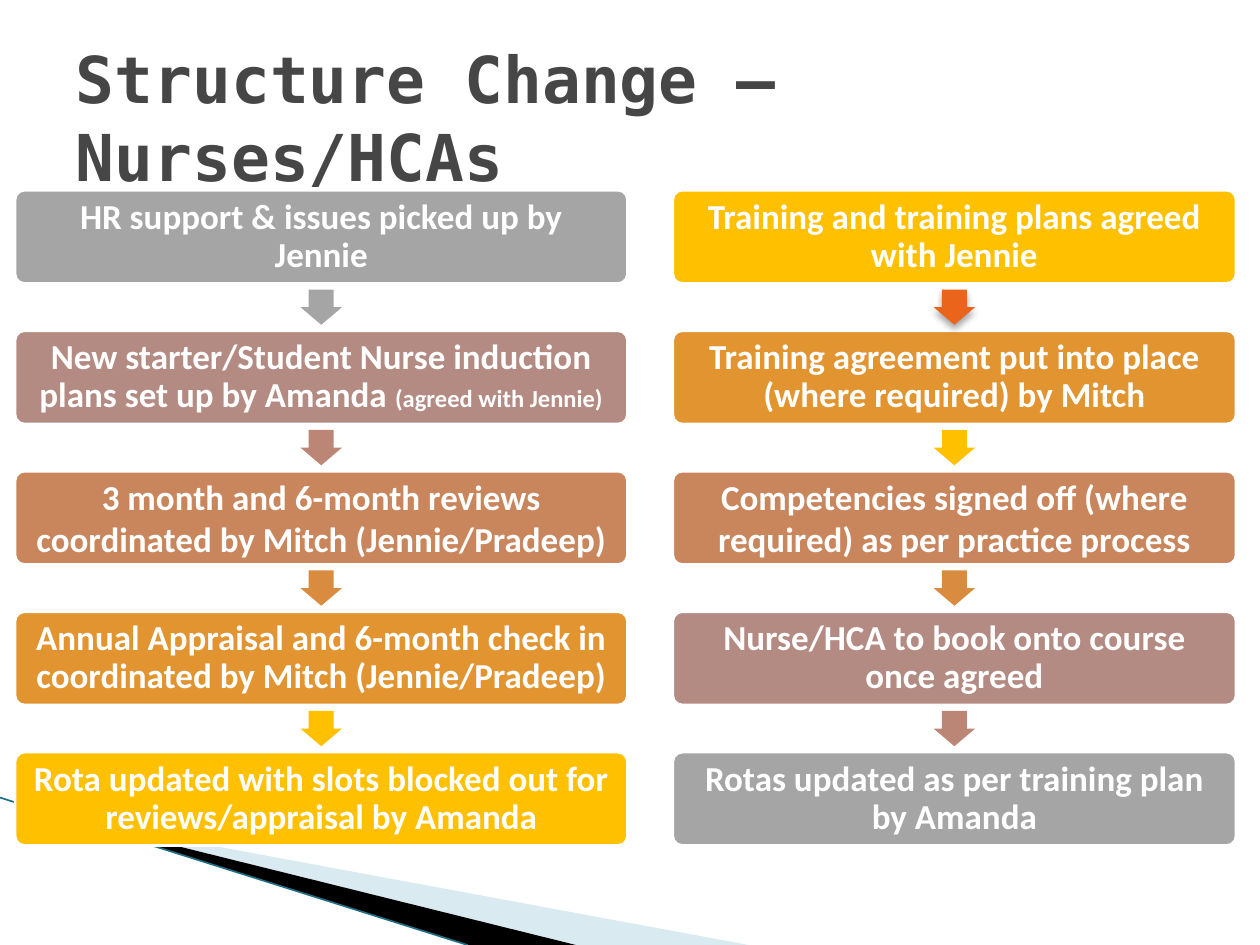
from dataclasses import dataclass

from lxml import etree
from pptx import Presentation
from pptx.dml.color import RGBColor
from pptx.enum import shapes, text
from pptx.oxml import ns
from pptx.util import Inches, Pt


@dataclass(frozen=True)
class Theme:
    """Colours, fonts and type sizes of the slide."""
    title: str = "464646"
    white: str = "FFFFFF"
    black: str = "000000"
    pale: str = "A0CBDC"
    teal: str = "1F6F86"
    grey: str = "A5A5A5"
    mauve: str = "B48B83"
    copper: str = "C9855C"
    orange: str = "E19430"
    yellow: str = "FFC000"
    arrow_mauve: str = "BB8676"
    arrow_orange: str = "D98C3F"
    arrow_red: str = "EB641B"
    title_font: str = "DejaVu Sans Mono"
    body_font: str = "Calibri"
    title_size: float = 36.9
    body_size: float = 20
    note_size: float = 14


T = Theme()
LEFT_STEPS = [
    ("HR support & issues picked up by Jennie", "", T.grey, 0.9),
    ("New starter/Student Nurse induction plans set up by Amanda ",
     "(agreed with Jennie)", T.mauve, 0.9),
    ("3 month and 6-month reviews coordinated by Mitch (Jennie/Pradeep)", "", T.copper, 1.0),
    ("Annual Appraisal and 6-month check in coordinated by Mitch (Jennie/Pradeep)",
     "", T.orange, 0.9),
    ("Rota updated with slots blocked out for reviews/appraisal by Amanda", "", T.yellow, 0.9),
]
RIGHT_STEPS = [
    ("Training and training plans agreed with Jennie", "", T.yellow, 0.9),
    ("Training agreement put into place (where required) by Mitch", "", T.orange, 0.9),
    ("Competencies signed off (where required) as per practice process", "", T.copper, 1.0),
    ("Nurse/HCA to book onto course once agreed", "", T.mauve, 0.9),
    ("Rotas updated as per training plan by Amanda", "", T.grey, 0.9),
]
LEFT_ARROWS = [T.grey, T.arrow_mauve, T.arrow_orange, T.yellow]
RIGHT_ARROWS = [T.arrow_red, T.yellow, T.arrow_orange, T.arrow_mauve]


def sub(parent, tag, **attrs):
    """Append a DrawingML child element and return it."""
    return etree.SubElement(parent, ns.qn(tag), **attrs)


def paint(sp, color):
    """Give a shape a plain fill without outline or shadow."""
    sp.shadow.inherit = False
    sp.fill.solid()
    sp.fill.fore_color.rgb = RGBColor.from_string(color)
    sp.line.fill.background()


def style_run(r, font, size, color):
    """Format one bold run."""
    r.font.name, r.font.size, r.font.bold = font, Pt(size), True
    r.font.color.rgb = RGBColor.from_string(color)


def add_title(s, box, words):
    """Place and format the title placeholder."""
    sp = s.shapes.title
    sp.left, sp.top, sp.width, sp.height = map(Inches, box)
    tf = sp.text_frame
    tf.text = words
    tf.word_wrap = True
    tf.auto_size = text.MSO_AUTO_SIZE.NONE
    tf.vertical_anchor = text.MSO_ANCHOR.MIDDLE
    p = tf.paragraphs[0]
    p.alignment = text.PP_ALIGN.LEFT
    style_run(p.runs[0], T.title_font, T.title_size, T.title)


def add_wedge(s, points, color):
    """Draw a filled polygon."""
    start, *rest = [(Inches(x), Inches(y)) for x, y in points]
    builder = s.shapes.build_freeform(*start, scale=1.0)
    builder.add_line_segments(rest, close=True)
    sp = builder.convert_to_shape()
    paint(sp, color)
    return sp


def add_swoosh(s, box):
    """Draw the corner wedges and the thin line inside the box."""
    x, y, w, h = box
    bottom = y + h
    pale = add_wedge(s, [(x, y), (x + w, bottom), (x + 4.03, bottom)], T.pale)
    color = pale.fill._xPr.find(".//" + ns.qn("a:srgbClr"))
    sub(color, "a:alpha", val="40000")
    add_wedge(s, [(x, y), (x + 4.03, bottom), (x + 3.18, bottom)], T.black)
    line = s.shapes.add_connector(shapes.MSO_CONNECTOR.STRAIGHT, Inches(0), Inches(6.33),
                                  Inches(3.71), Inches(7.5))
    line.line.color.rgb = RGBColor.from_string(T.teal)
    line.line.width = Pt(0.95)
    sub(line._element.spPr, "a:effectLst")


def add_card(s, box, step):
    """Draw one rounded step with its centred wording."""
    words, note, color, spacing = step
    sp = s.shapes.add_shape(shapes.MSO_SHAPE.ROUNDED_RECTANGLE, *map(Inches, box))
    sp.adjustments[0] = 0.1
    paint(sp, color)
    sp.line.color.rgb = RGBColor.from_string(T.white)
    sp.line.width = Pt(1.5)
    tf = sp.text_frame
    tf.word_wrap = True
    tf.vertical_anchor = text.MSO_ANCHOR.MIDDLE
    tf.margin_left = tf.margin_right = tf.margin_top = tf.margin_bottom = Inches(0.1)
    tf.text = words
    p = tf.paragraphs[0]
    p.alignment, p.line_spacing = text.PP_ALIGN.CENTER, spacing
    style_run(p.runs[0], T.body_font, T.body_size, T.white)
    if note:
        r = p.add_run()
        r.text = note
        style_run(r, T.body_font, T.note_size, T.white)


def add_arrow(s, cx, cy, color):
    """Draw a down arrow centred on a point."""
    w, h = 0.33, 0.28
    sp = s.shapes.add_shape(shapes.MSO_SHAPE.DOWN_ARROW, Inches(cx - w / 2),
                            Inches(cy - h / 2), Inches(w), Inches(h))
    sp.adjustments[0], sp.adjustments[1] = 0.6, 0.5
    paint(sp, color)
    return sp


def add_shadow(sp):
    """Give a shape a soft shadow below it."""
    effects = sp._element.spPr.find(ns.qn("a:effectLst"))
    shadow = sub(effects, "a:outerShdw", blurRad=str(Pt(4)), dist=str(Pt(3)),
                 dir="5400000", rotWithShape="0")
    sub(sub(shadow, "a:srgbClr", val=T.black), "a:alpha", val="35000")


def add_flow(s, box, steps, arrows):
    """Stack steps evenly in the box with an arrow in each gap."""
    x, y, w, h = box
    card_h = 0.74
    pitch = (h - card_h) / (len(steps) - 1)
    for i, step in enumerate(steps):
        add_card(s, (x, y + i * pitch, w, card_h), step)
    drawn = []
    for i, color in enumerate(arrows):
        cy = y + i * pitch + (card_h + pitch) / 2
        drawn.append(add_arrow(s, x + w / 2, cy, color))
    return drawn


def main():
    """Build and save the slide."""
    prs = Presentation()
    prs.slide_width, prs.slide_height = Inches(10), Inches(7.5)
    s = prs.slides.add_slide(prs.slide_layouts[5])
    add_swoosh(s, (0.54, 6.5, 5.4, 1))
    add_title(s, (0.5, 0.3, 9, 1.25), "Structure Change – Nurses/HCAs")
    right = add_flow(s, (5.34, 1.51, 4.47, 5.2), RIGHT_STEPS, RIGHT_ARROWS)
    add_shadow(right[0])
    add_flow(s, (0.12, 1.51, 4.86, 5.2), LEFT_STEPS, LEFT_ARROWS)
    prs.save("out.pptx")


if __name__ == "__main__":
    main()
